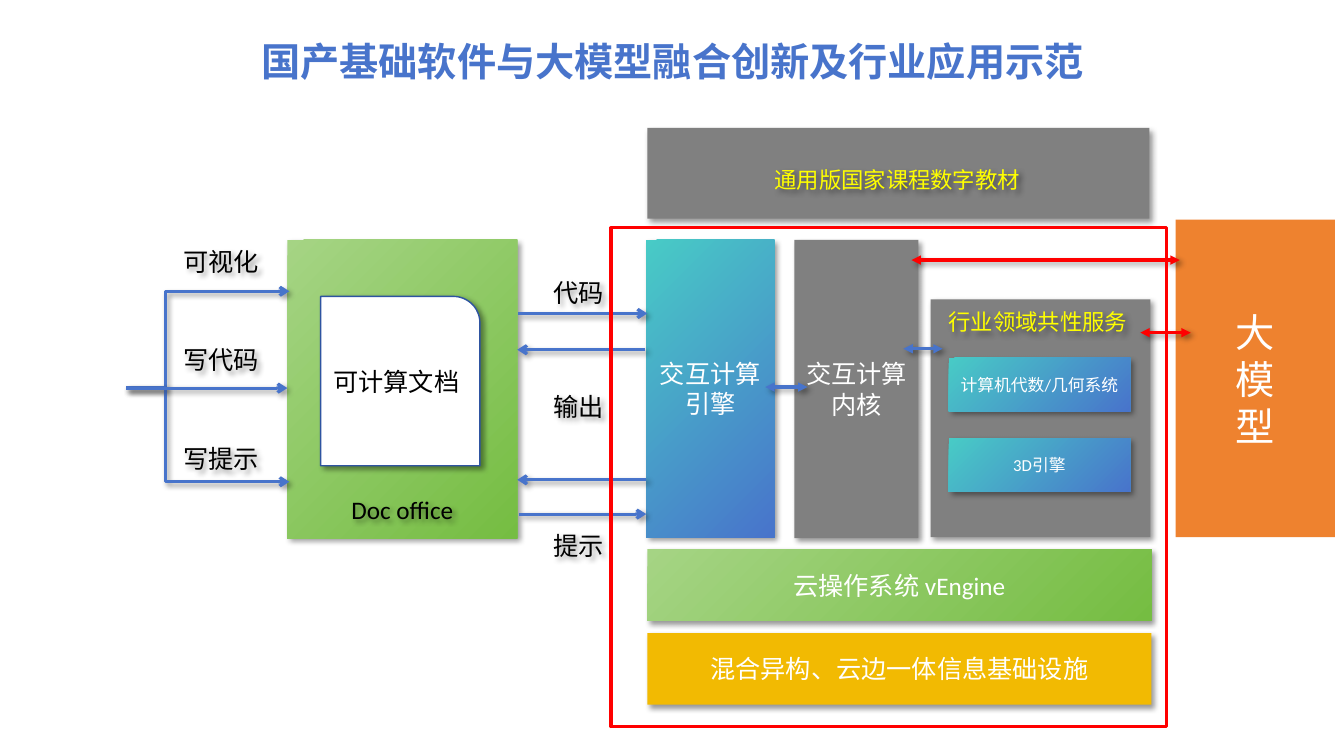
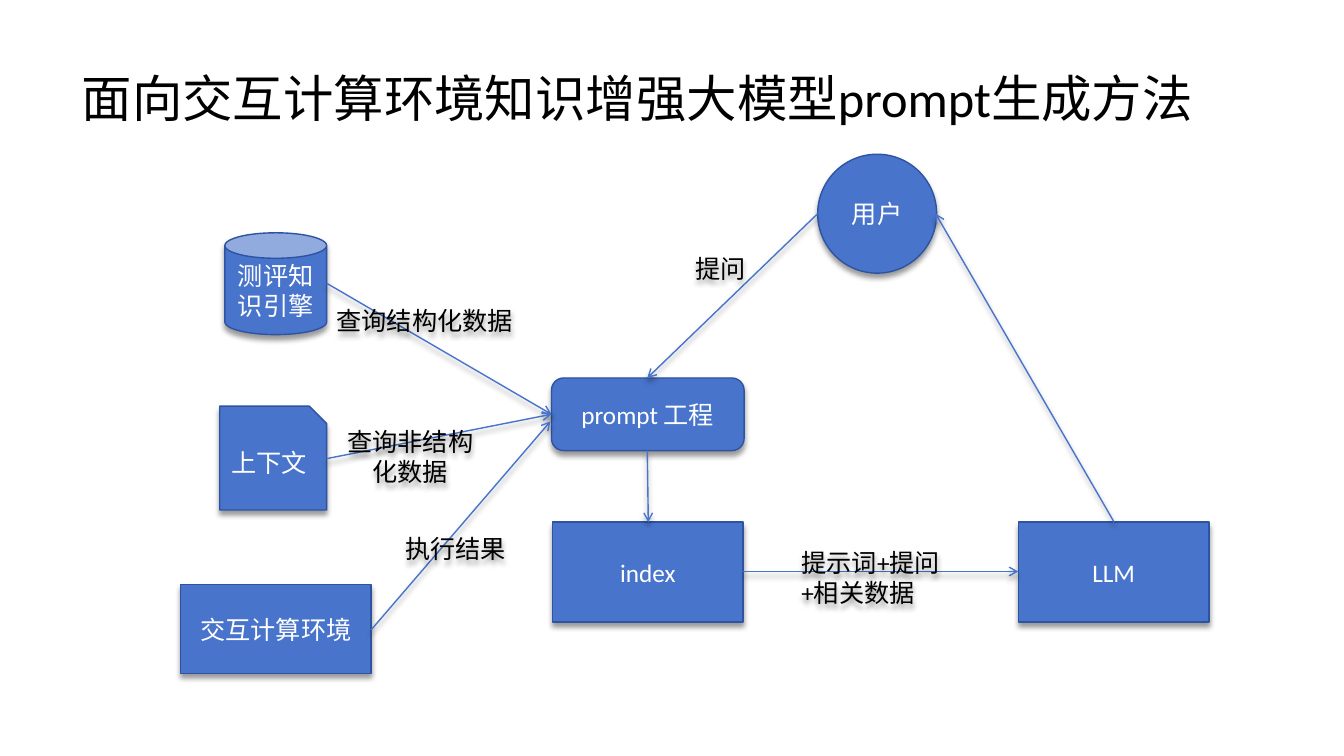
"""Build two slides on joining an interactive computing stack with a large language model."""
from lxml import etree
from pptx import Presentation
from pptx.dml.color import RGBColor
from pptx.enum import lang, shapes, text
from pptx.oxml import ns
from pptx.util import Inches, Pt

rgb = RGBColor.from_string
KIND = shapes.MSO_SHAPE
LINK = shapes.MSO_CONNECTOR
MID, LEFT = text.PP_ALIGN.CENTER, text.PP_ALIGN.LEFT
BLUE, NAVY, RED, GRAY = "4874CB", "2E54A1", "FF0000", "808080"
WHITE, BLACK, YELLOW = "FFFFFF", "000000", "FFFF00"
GREEN, TEAL = ("A5D484", "75BD42"), ("48CBC6", BLUE)


def box(page, kind, spot, words="", fill=None, edge=None, wide=1, size=18, ink=WHITE, side=MID):
    """Add a preset shape, or a text box when kind is None."""
    place = [Inches(n) for n in spot]
    if kind is None:
        item = page.shapes.add_textbox(*place)
    else:
        item = page.shapes.add_shape(kind, *place)
        if fill is None:
            item.fill.background()
        elif isinstance(fill, tuple):
            item.fill.gradient()
            item.fill.gradient_angle = 315
            for stop, tone in zip(item.fill.gradient_stops, fill):
                stop.color.rgb = rgb(tone)
        else:
            item.fill.solid()
            item.fill.fore_color.rgb = rgb(fill)
        if edge:
            item.line.color.rgb = rgb(edge)
            item.line.width = Pt(wide)
        else:
            item.line.fill.background()
    frame = item.text_frame
    frame.word_wrap = True
    if words:
        frame.text = words
        for para in frame.paragraphs:
            para.alignment = side
            para.font.size = Pt(size)
            para.font.name = "Calibri"
            para.font.color.rgb = rgb(ink)
            para.font.language_id = lang.MSO_LANGUAGE_ID.SIMPLIFIED_CHINESE
    return item


def wire(page, start, end, wide, tone=BLUE, kind=LINK.STRAIGHT, both=False):
    """Add a line with an arrowhead at its end, or triangles at both ends."""
    item = page.shapes.add_connector(kind, *[Inches(n) for n in start + end])
    item.line.color.rgb = rgb(tone)
    item.line.width = Pt(wide)
    edge = item.element.spPr.find(ns.qn("a:ln"))
    if both:
        etree.SubElement(edge, ns.qn("a:headEnd"), type="triangle")
    etree.SubElement(edge, ns.qn("a:tailEnd"), type="triangle" if both else "arrow")
    return item


deck = Presentation()
deck.slide_width, deck.slide_height = Inches(13.33), Inches(7.5)
pages = []
for words, spot, size, name, tone, bold, side, hold in (
    ("国产基础软件与大模型融合创新及行业应用示范", (0.23, 0.32, 12.88, 0.57), 28,
     "Noto Sans CJK SC", BLUE, True, MID, text.MSO_ANCHOR.TOP),
    ("面向交互计算环境知识增强大模型prompt生成方法", (0.71, 0.28, 11.5, 1.45), 36,
     "Calibri", BLACK, False, LEFT, text.MSO_ANCHOR.MIDDLE),
):
    page = deck.slides.add_slide(deck.slide_layouts[5])
    title = page.shapes.title
    title.left, title.top, title.width, title.height = [Inches(n) for n in spot]
    frame = title.text_frame
    frame.text = words
    frame.auto_size = text.MSO_AUTO_SIZE.NONE
    frame.vertical_anchor = hold
    para = frame.paragraphs[0]
    para.alignment = side
    para.line_spacing = 0.9 if side == LEFT else 1.0
    para.font.size = Pt(size)
    para.font.name = name
    para.font.bold = bold
    para.font.color.rgb = rgb(tone)
    para.font.language_id = lang.MSO_LANGUAGE_ID.SIMPLIFIED_CHINESE
    pages.append(page)
stack, flow = pages

for spot, words, fill, size in (
    ((2.85, 2.38, 2.28, 2.96), "", GREEN, 18),
    ((6.42, 6.28, 5, 0.71), "混合异构、云边一体信息基础设施", "F2BA02", 18),
    ((6.42, 5.45, 5, 0.71), "云操作系统 vEngine", GREEN, 18),
    ((6.41, 2.38, 1.27, 2.95), "交互计算引擎", TEAL, 18),
    ((7.88, 2.38, 1.23, 2.96), "交互计算内核", GRAY, 18),
    ((9.23, 2.97, 2.18, 2.36), "", GRAY, 18),
    ((6.42, 1.27, 4.98, 0.9), "", GRAY, 18),
    ((9.41, 3.55, 1.8, 0.53), "计算机代数/几何系统", TEAL, 12),
    ((9.41, 4.35, 1.8, 0.53), "3D引擎", TEAL, 12),
):
    box(stack, KIND.RECTANGLE, spot, words, fill, size=size)
model = box(stack, KIND.RECTANGLE, (11.66, 2.18, 1.58, 3.15), "大\n模\n型", "EE822F", size=28)
box(stack, KIND.ROUND_1_RECTANGLE, (3.18, 2.94, 1.58, 1.68), "可计算文档", WHITE, NAVY, ink=BLACK)

for spot, words, size, ink, side in (
    ((2.7, 4.85, 2.58, 0.4), "Doc office", 18, BLACK, MID),
    ((6.41, 1.6, 4.98, 0.37), "通用版国家课程数字教材", 16, YELLOW, MID),
    ((9.19, 3.01, 2.21, 0.37), "行业领域共性服务", 16, YELLOW, MID),
    ((5.39, 2.7, 0.77, 0.4), "代码", 18, BLACK, LEFT),
    ((5.39, 3.83, 0.77, 0.4), "输出", 18, BLACK, LEFT),
    ((5.39, 5.21, 0.77, 0.4), "提示", 18, BLACK, LEFT),
    ((1.72, 2.39, 1.06, 0.4), "可视化", 18, BLACK, LEFT),
    ((1.72, 3.37, 1.06, 0.4), "写代码", 18, BLACK, LEFT),
    ((1.72, 4.35, 1.06, 0.4), "写提示", 18, BLACK, LEFT),
):
    box(stack, None, spot, words, size=size, ink=ink, side=side)

for high in (2.89, 4.78):
    bend = wire(stack, (1.25, 3.85), (2.87, high), 2.25, kind=LINK.ELBOW)
    shape = bend.element.spPr.find(ns.qn("a:prstGeom"))
    turns = shape.find(ns.qn("a:avLst"))
    etree.SubElement(turns, ns.qn("a:gd"), name="adj1", fmla="val 24100")
wire(stack, (1.25, 3.85), (2.85, 3.85), 2.25)
for start, end, high in ((5.14, 6.42, 3.11), (6.4, 5.13, 3.47), (5.15, 6.41, 5.1), (6.41, 5.13, 4.76)):
    wire(stack, (start, high), (end, high), 2.25)
for start, end, high, tone in (
    (9.35, 8.96, 3.46, BLUE), (8.01, 7.59, 3.84, BLUE),
    (11.7, 9.04, 2.58, RED), (11.81, 11.31, 3.3, RED),
):
    wire(stack, (start, high), (end, high), 2.25, tone, both=True)
bound = box(stack, KIND.RECTANGLE, (6.06, 2.26, 5.51, 4.95), edge=RED, wide=2.25)

for kind, spot, words in (
    (KIND.CAN, (2.23, 2.31, 1.01, 1.01), "测评知识引擎"),
    (KIND.SNIP_1_RECTANGLE, (2.18, 4.03, 1.06, 1.03), "上下文"),
    (KIND.RECTANGLE, (5.48, 5.18, 1.89, 0.99), "index"),
    (KIND.RECTANGLE, (10.1, 5.18, 1.89, 0.99), "LLM"),
    (KIND.OVAL, (8.11, 1.53, 1.18, 1.18), "用户"),
    (KIND.ROUNDED_RECTANGLE, (5.47, 3.75, 1.91, 0.72), "prompt 工程"),
    (KIND.RECTANGLE, (1.79, 5.8, 1.89, 0.88), "交互计算环境"),
):
    box(flow, kind, spot, words, BLUE, NAVY)
for start, end in (
    ((8.11, 2.12), (6.42, 3.75)),
    ((7.37, 5.67), (10.1, 5.67)),
    ((3.24, 2.81), (5.47, 4.11)),
    ((3.24, 4.55), (5.47, 4.11)),
    ((3.68, 6.25), (5.46, 4.18)),
    ((6.42, 4.47), (6.43, 5.18)),
    ((11.05, 5.18), (9.28, 2.12)),
):
    wire(flow, start, end, 1)
for spot, words, side in (
    ((6.6, 2.46, 1.09, 0.4), "提问", MID),
    ((3.24, 2.98, 2.04, 0.4), "查询结构化数据", LEFT),
    ((3.23, 4.18, 1.68, 0.71), "查询非结构化数据", MID),
    ((3.68, 5.24, 1.68, 0.4), "执行结果", MID),
    ((7.85, 5.38, 1.68, 0.71), "提示词+提问+相关数据", LEFT),
):
    box(flow, None, spot, words, ink=BLACK, side=side)

for page, turn, plain in ((stack, 45, (model.shape_id, bound.shape_id)), (flow, 90, ())):
    for item in page.shapes:
        if item.is_placeholder:
            continue
        glow = etree.SubElement(item.element.spPr, ns.qn("a:effectLst"))
        if item.shape_id not in plain:
            shade = etree.SubElement(glow, ns.qn("a:outerShdw"), blurRad=str(Pt(4)), dist=str(Pt(3)),
                                     dir=str(turn * 60000), algn="tl", rotWithShape="0")
            tint = etree.SubElement(shade, ns.qn("a:srgbClr"), val=BLACK)
            etree.SubElement(tint, ns.qn("a:alpha"), val="40000")

deck.save("out.pptx")
